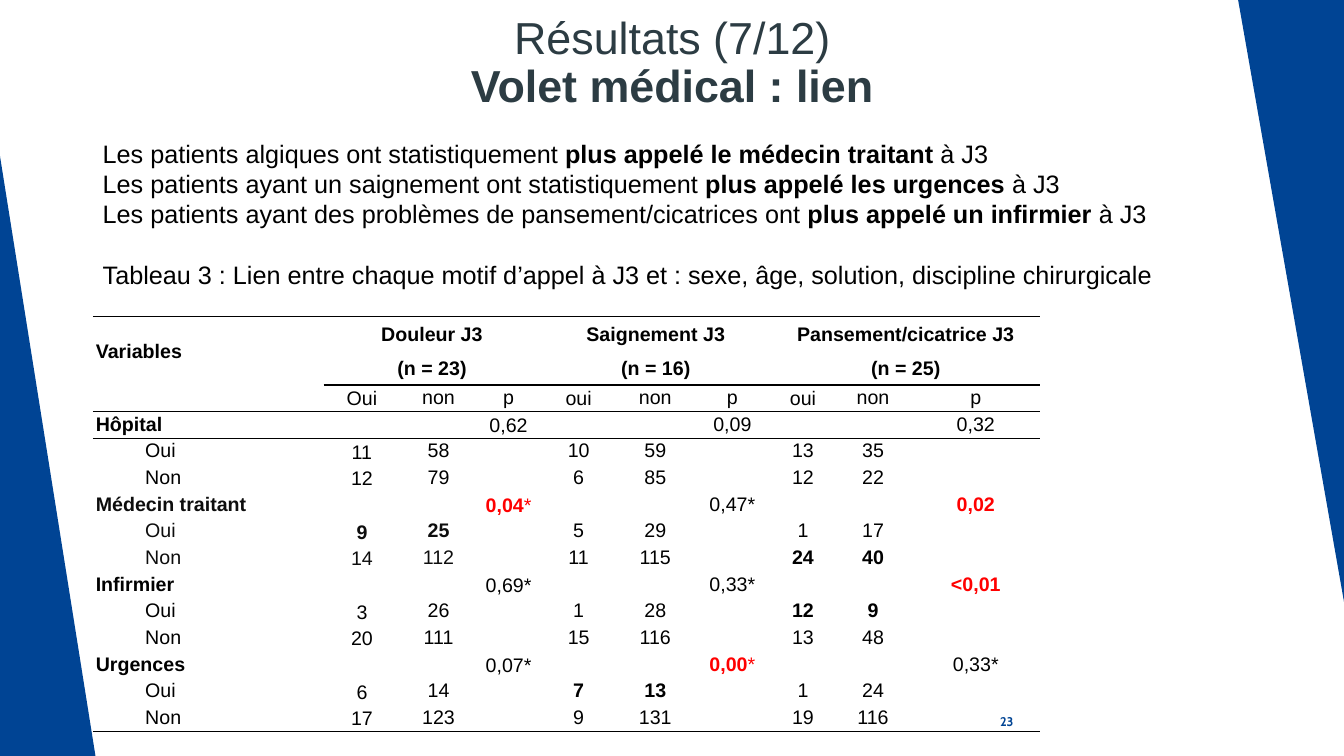
from lxml.etree import SubElement
from pptx import Presentation
from pptx.dml.color import RGBColor
from pptx.enum.shapes import MSO_SHAPE
from pptx.enum.text import MSO_ANCHOR, PP_ALIGN
from pptx.oxml.ns import qn
from pptx.util import Inches, Pt

COLORS = {"blue": "004494", "title": "2C3C43", "black": "000000",
          "soft_black": "0D0D0D", "red": "FF0000"}
NO_GRID_STYLE = "{2D5ABB26-0587-4C30-8999-92F81FD0307C}"
COLUMN_WIDTHS = [2.29, 0.76, 0.76, 0.63, 0.76, 0.76, 0.77, 0.63, 0.76, 1.28]
HEADER_HEIGHT = 0.68
TABLE_HEIGHT = 4.12
GROUPS = [("Douleur J3", "(n = 23)"), ("Saignement J3", "(n = 16)"),
          ("Pansement/cicatrice J3", "(n = 25)")]
# A leading + marks a bold value and ! a significant one.
BODY_ROWS = [row.split(";") for row in (
    ";Oui;non;p;oui;non;p;oui;non;p",
    "+Hôpital;;;0,62;;;0,09;;;0,32",
    "Oui;11;58;;10;59;;13;35;",
    "Non;12;79;;6;85;;12;22;",
    "+Médecin traitant;;;!0,04*;;;0,47*;;;!0,02",
    "Oui;+9;+25;;5;29;;1;17;",
    "Non;14;112;;11;115;;+24;+40;",
    "+Infirmier;;;0,69*;;;0,33*;;;!<0,01",
    "Oui;3;26;;1;28;;+12;+9;",
    "Non;20;111;;15;116;;13;48;",
    "+Urgences;;;0,07*;;;!0,00*;;;0,33*",
    "Oui;6;14;;+7;+13;;1;24;",
    "Non;17;123;;9;131;;19;116;",
)]
FINDINGS = [
    ("Les patients algiques ont statistiquement ",
     "plus appelé le médecin traitant "),
    ("Les patients ayant un saignement ont statistiquement ",
     "plus appelé les urgences "),
    ("Les patients ayant des problèmes de pansement/cicatrices ont ",
     "plus appelé un infirmier "),
]
CAPTION = ("Tableau 3 : Lien entre chaque motif d’appel à J3 et : "
           "sexe, âge, solution, discipline chirurgicale")


def add_run(paragraph, text, size, color="black", bold=False, font="Arial"):
    """Append one formatted run."""
    run = paragraph.add_run()
    run.text = text
    run.font.name = font
    run.font.size = Pt(size)
    run.font.bold = bold
    run.font.color.rgb = RGBColor.from_string(COLORS[color])


def add_text_box(slide, left, top, width, height, anchor=MSO_ANCHOR.TOP):
    """Add a wrapping text box and return its text frame."""
    frame = slide.shapes.add_textbox(
        Inches(left), Inches(top), Inches(width), Inches(height)).text_frame
    frame.word_wrap = True
    frame.vertical_anchor = anchor
    return frame


def add_side_triangle(slide, left, top, width, rotation=0):
    """Add one of the blue corner triangles."""
    shape = slide.shapes.add_shape(MSO_SHAPE.RIGHT_TRIANGLE, Inches(left),
                                   Inches(top), Inches(width), Inches(5.97))
    shape.rotation = rotation
    shape.shadow.inherit = False
    shape.fill.solid()
    shape.fill.fore_color.rgb = RGBColor.from_string(COLORS["blue"])
    shape.line.fill.background()


def add_border(cell, side):
    """Draw a thin black line on the T or B side of a cell."""
    line = SubElement(cell._tc.get_or_add_tcPr(), qn(f"a:ln{side}"), w="12700")
    fill = SubElement(line, qn("a:solidFill"))
    SubElement(fill, qn("a:srgbClr"), val=COLORS["black"])


def format_cell(cell, sides, anchor):
    """Set the margins, borders, fill and anchor of a cell."""
    cell.margin_left = cell.margin_right = Inches(0.03)
    cell.margin_top = cell.margin_bottom = 0
    cell.vertical_anchor = anchor
    for side in sides:
        add_border(cell, side)
    cell.fill.background()


def format_cell_paragraph(paragraph, centered):
    """Set the spacing and alignment of a table paragraph."""
    paragraph.line_spacing = 1.07
    paragraph.space_after = Pt(8)
    paragraph.alignment = PP_ALIGN.CENTER if centered else PP_ALIGN.LEFT


def write_value(paragraph, value, color):
    """Write a marked value, keeping the star of a significant one regular."""
    if not value:
        SubElement(paragraph._p, qn("a:endParaRPr"), sz="1400")
    elif value.startswith("!"):
        number = value[1:].rstrip("*")
        add_run(paragraph, number, 14, "red", True)
        if value.endswith("*"):
            add_run(paragraph, "*", 14, "red")
    else:
        add_run(paragraph, value.lstrip("+"), 14, color, value.startswith("+"))


def fill_header(table):
    """Fill the header row with the three call reasons."""
    for column in range(len(COLUMN_WIDTHS)):
        format_cell(table.cell(0, column), "TB" if column else "T",
                    MSO_ANCHOR.MIDDLE)
    paragraph = table.cell(0, 0).text_frame.paragraphs[0]
    format_cell_paragraph(paragraph, False)
    add_run(paragraph, "Variables", 14, bold=True)
    for index, lines in enumerate(GROUPS):
        first = 1 + 3 * index
        cell = table.cell(0, first)
        cell.merge(table.cell(0, first + 2))
        frame = cell.text_frame
        for number, text in enumerate(lines):
            paragraph = frame.add_paragraph() if number else frame.paragraphs[0]
            format_cell_paragraph(paragraph, True)
            add_run(paragraph, text, 14, bold=True)


def fill_body_row(table, row, values):
    """Fill one row below the header."""
    sides = {1: "TB", 2: "T", len(BODY_ROWS): "B"}.get(row, "")
    for column, value in enumerate(values):
        cell = table.cell(row, column)
        middle_columns = (1, 4, 7) if row == 1 else (1, 3)
        anchor = MSO_ANCHOR.MIDDLE if column in middle_columns else MSO_ANCHOR.TOP
        format_cell(cell, "B" if row == 1 and column == 0 else sides, anchor)
        paragraph = cell.text_frame.paragraphs[0]
        format_cell_paragraph(paragraph, column > 0)
        if value in ("Oui", "Non") and column == 0:
            paragraph._p.get_or_add_pPr().set("marL", str(Inches(0.49)))
        in_doctor_block = 5 <= row <= 7 and column < 3
        write_value(paragraph, value, "soft_black" if in_doctor_block else "black")


def add_results_table(slide):
    """Add the table of links between call reasons and contacts."""
    table = slide.shapes.add_table(
        len(BODY_ROWS) + 1, len(COLUMN_WIDTHS), Inches(0.92), Inches(3.14),
        Inches(sum(COLUMN_WIDTHS)), Inches(TABLE_HEIGHT)).table
    table.first_row = table.horz_banding = False
    table._tbl.tblPr.find(qn("a:tableStyleId")).text = NO_GRID_STYLE
    for column, width in zip(table.columns, COLUMN_WIDTHS):
        column.width = Inches(width)
    for row in table.rows:
        row.height = Inches((TABLE_HEIGHT - HEADER_HEIGHT) / len(BODY_ROWS))
    table.rows[0].height = Inches(HEADER_HEIGHT)
    fill_header(table)
    for row, values in enumerate(BODY_ROWS, 1):
        fill_body_row(table, row, values)


def add_title(slide):
    """Add the two-line centred title."""
    paragraph = add_text_box(slide, 0.92, 0.11, 11.5, 1.17).paragraphs[0]
    paragraph.alignment = PP_ALIGN.CENTER
    paragraph.line_spacing = 0.89
    add_run(paragraph, "Résultats (7/12)", 32, "title")
    paragraph.add_line_break()
    add_run(paragraph, "Volet médical : lien", 32, "title", True)


def add_findings(slide):
    """Add the findings and the table caption."""
    frame = add_text_box(slide, 0.92, 1.32, 11.95, 1.62)
    for index, (start, emphasis) in enumerate(FINDINGS):
        paragraph = frame.add_paragraph() if index else frame.paragraphs[0]
        add_run(paragraph, start, 18)
        add_run(paragraph, emphasis, 18, bold=True)
        add_run(paragraph, "à J3", 18)
    caption = frame.add_paragraph()
    caption.space_before = Pt(21.5)
    add_run(caption, CAPTION, 18)


def add_slide_number(slide):
    """Add the slide number."""
    frame = add_text_box(slide, 9.4, 6.96, 0.75, 0.4, MSO_ANCHOR.MIDDLE)
    frame.paragraphs[0].alignment = PP_ALIGN.RIGHT
    add_run(frame.paragraphs[0], "23", 9, "blue", True, "Cabin")


def main():
    """Build and save the slide."""
    presentation = Presentation()
    presentation.slide_width = Inches(13.33)
    presentation.slide_height = Inches(7.5)
    slide = presentation.slides.add_slide(presentation.slide_layouts[6])
    add_side_triangle(slide, 0, 1.55, 0.95)
    add_side_triangle(slide, 12.28, 0, 1.05, 180)
    add_results_table(slide)
    add_slide_number(slide)
    add_title(slide)
    add_findings(slide)
    presentation.save("out.pptx")


if __name__ == "__main__":
    main()
